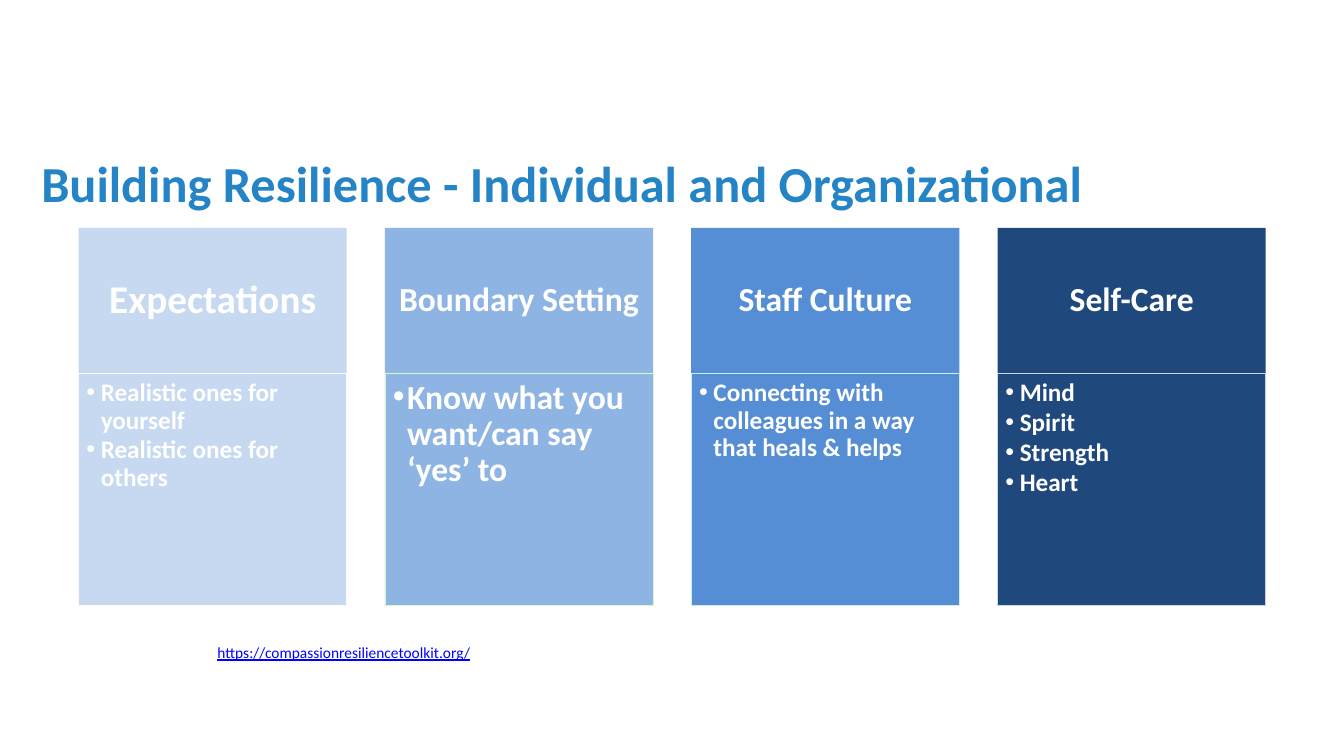
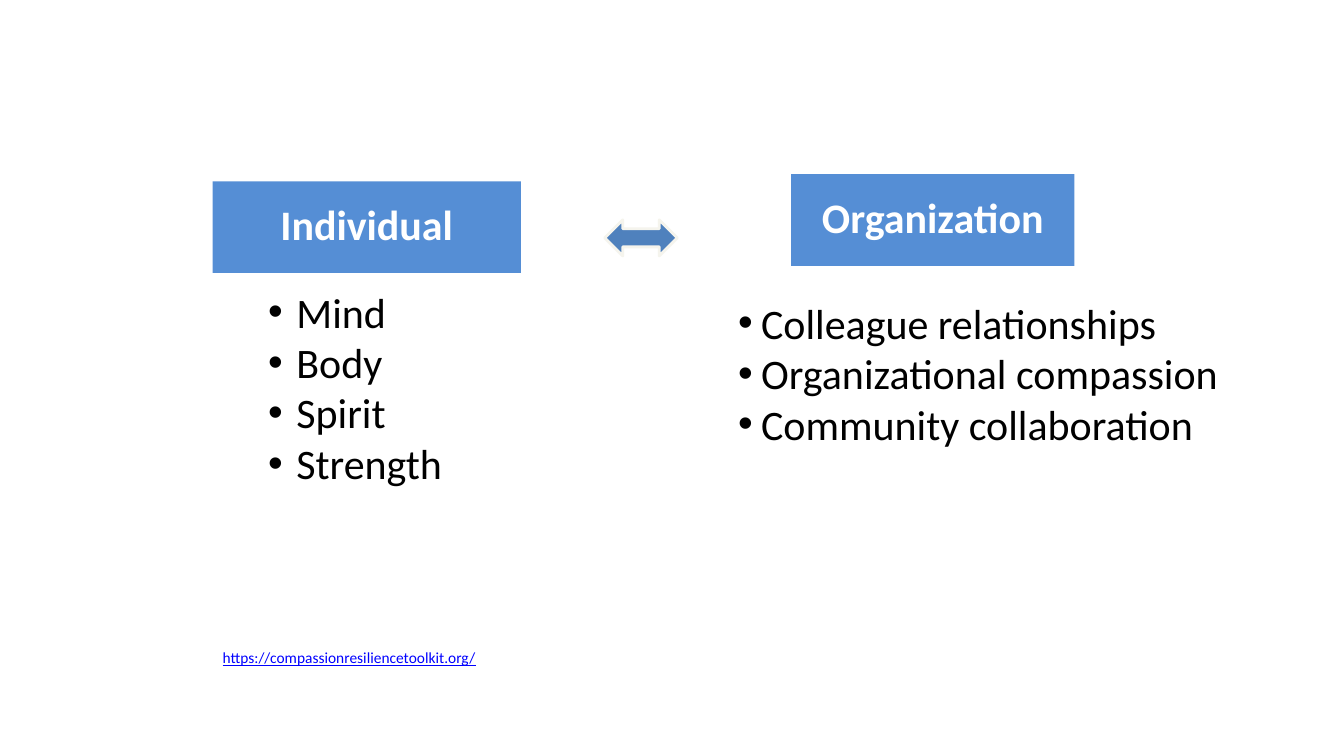
"""Build two slides on individual and organizational resilience."""
from dataclasses import dataclass

from lxml import etree
from pptx import Presentation
from pptx.dml.color import RGBColor
from pptx.enum import shapes, text
from pptx.oxml import ns
from pptx.util import Cm, Pt


@dataclass(frozen=True)
class Theme:
    font: str = "Calibri"
    title: str = "2584C6"
    white: str = "FFFFFF"
    black: str = "000000"
    link: str = "0000FF"
    pale: str = "C6D9F1"
    light: str = "8EB4E3"
    mid: str = "558ED5"
    navy: str = "1F497D"
    arrow: str = "4F81BD"
    arrow_line: str = "F5F4ED"
    title_size: int = 36
    heading_size: int = 30
    card_size: int = 24
    list_size: int = 18
    link_size: int = 11


T = Theme()


def write(sp, lines, size, color, bold=False, underline=False, align=text.PP_ALIGN.LEFT,
          anchor=text.MSO_ANCHOR.TOP, margins=(0.25, 0.13), spacing=1.0, gap=0, indent=None):
    """Fill a shape with one styled paragraph per line, bulleted when indent is set."""
    tf = sp.text_frame
    tf.word_wrap = True
    tf.auto_size = text.MSO_AUTO_SIZE.NONE
    tf.vertical_anchor = anchor
    tf.margin_left = tf.margin_right = Cm(margins[0])
    tf.margin_top = tf.margin_bottom = Cm(margins[1])
    for i, line in enumerate(lines):
        p = tf.paragraphs[0] if i == 0 else tf.add_paragraph()
        p.alignment, p.line_spacing = align, spacing
        p.space_before = Pt(gap if i else 0)
        if indent:
            pPr = p._p.get_or_add_pPr()
            pPr.set("marL", str(Cm(indent)))
            pPr.set("indent", str(-Cm(indent)))
            etree.SubElement(pPr, ns.qn("a:buFont")).set("typeface", "Arial")
            etree.SubElement(pPr, ns.qn("a:buChar")).set("char", "•")
        r = p.add_run()
        r.text = line
        r.font.name, r.font.size = T.font, Pt(size)
        r.font.bold, r.font.underline = bold, underline
        r.font.color.rgb = RGBColor.from_string(color)


def box(s, left, top, width, height, fill, line=None, line_width=0.5,
        kind=shapes.MSO_SHAPE.RECTANGLE):
    """Add a flat filled shape, measured in centimetres."""
    sp = s.shapes.add_shape(kind, Cm(left), Cm(top), Cm(width), Cm(height))
    sp.shadow.inherit = False
    sp.fill.solid()
    sp.fill.fore_color.rgb = RGBColor.from_string(fill)
    if line:
        sp.line.color.rgb = RGBColor.from_string(line)
        sp.line.width = Pt(line_width)
    else:
        sp.line.fill.background()
    return sp


prs = Presentation()
prs.slide_width, prs.slide_height = Cm(33.87), Cm(19.05)
pillars = prs.slides.add_slide(prs.slide_layouts[5])
pairs = prs.slides.add_slide(prs.slide_layouts[3])

title = pillars.shapes.title
title.left, title.top, title.width, title.height = Cm(0.3), Cm(3.53), Cm(27.86), Cm(2.11)
write(title, ["Building Resilience - Individual and Organizational"], T.title_size, T.title,
      bold=True, anchor=text.MSO_ANCHOR.MIDDLE, margins=(0.74, 0.25))

cards = [
    ("Expectations", 28, T.pale, "FCFBF9", T.list_size,
     ["Realistic ones for yourself", "Realistic ones for others"]),
    ("Boundary Setting", T.card_size, T.light, "DAF8C9", T.card_size,
     ["Know what you want/can say ‘yes’ to"]),
    ("Staff Culture", T.card_size, T.mid, "CAF1E5", T.list_size,
     ["Connecting with colleagues in a way that heals & helps"]),
    ("Self-Care", T.card_size, T.navy, "CDD3E8", T.list_size,
     ["Mind", "Spirit", "Strength", "Heart"]),
]
for i, (heading, size, fill, line, list_size, items) in enumerate(cards):
    left = 1.98 + 7.72 * i
    head = box(pillars, left, 5.74, 6.76, 3.66, fill)
    write(head, [heading], size, T.white, bold=True, align=text.PP_ALIGN.CENTER,
          anchor=text.MSO_ANCHOR.MIDDLE, margins=(0.3, 0.18), spacing=0.9)
    body = box(pillars, left, 9.4, 6.76, 5.86, fill, line)
    write(body, items, list_size, T.white, bold=True, margins=(0.2, 0.18),
          spacing=0.9, gap=1.8, indent=0.36)

pairs.shapes.title.element.getparent().remove(pairs.shapes.title.element)
columns = [
    (1, "Individual", (5.36, 4.57, 7.77, 2.31), (6.58, 7.11, 6.58, 4.83), 0.71,
     ["Mind", "Body", "Spirit", "Strength"]),
    (2, "Organization", (19.94, 4.39, 7.14, 2.31), (18.42, 7.39, 12.93, 7.85), 0.58,
     ["Colleague relationships", "Organizational compassion", "Community collaboration"]),
]
for idx, heading, head_at, list_at, indent, items in columns:
    head = box(pairs, *head_at, T.mid)
    write(head, [heading], T.heading_size, T.white, bold=True, align=text.PP_ALIGN.CENTER,
          anchor=text.MSO_ANCHOR.MIDDLE, margins=(0.28, 0.28), spacing=0.9)
    body = pairs.placeholders[idx]
    body.left, body.top, body.width, body.height = map(Cm, list_at)
    write(body, items, T.heading_size, T.black, margins=(0.18, 0.1), indent=indent)
box(pairs, 15.24, 5.54, 1.83, 0.91, T.arrow, T.arrow_line, 2,
    shapes.MSO_SHAPE.LEFT_RIGHT_ARROW)

for s, left, top in [(pillars, 5.23, 16.08), (pairs, 5.36, 16.21)]:
    link = s.shapes.add_textbox(Cm(left), Cm(top), Cm(7.5), Cm(0.75))
    write(link, ["https://compassionresiliencetoolkit.org/"], T.link_size, T.link,
          underline=True)

prs.save("out.pptx")
